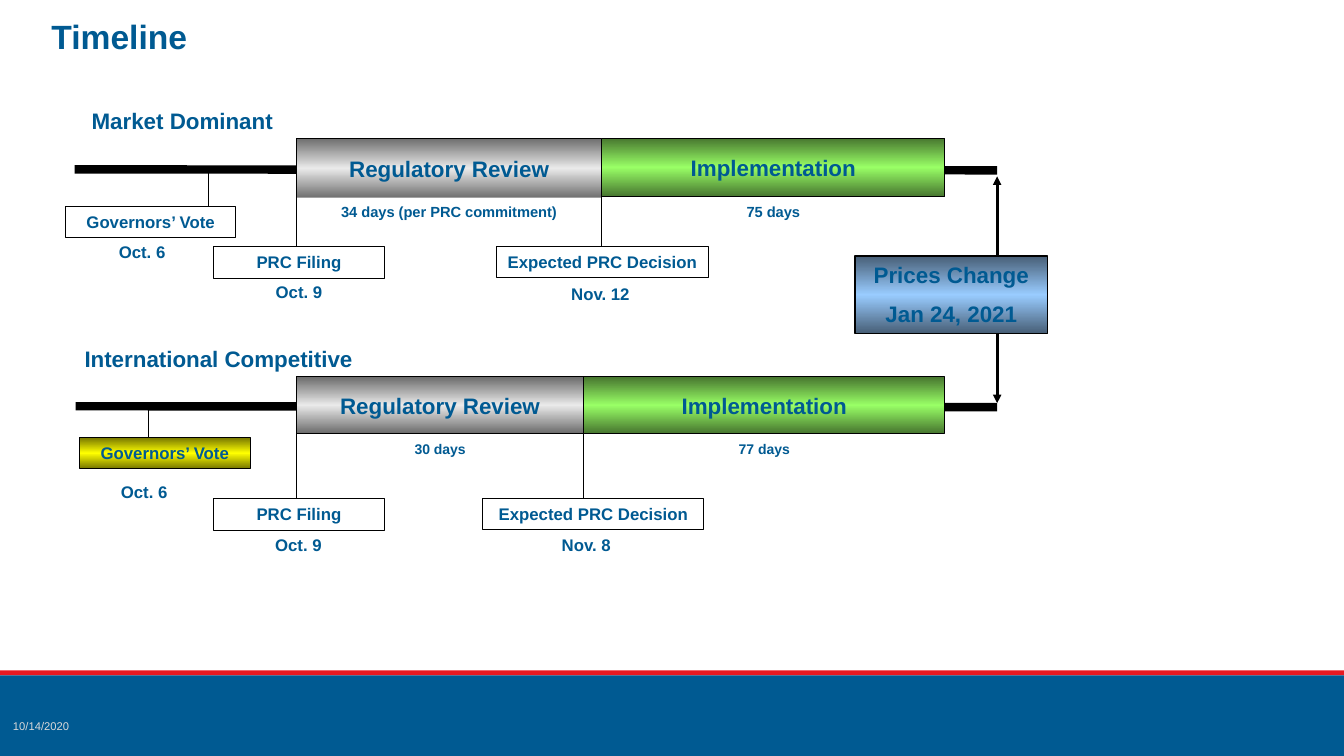
from lxml import etree
from pptx import Presentation
from pptx import util as u
from pptx.dml.color import RGBColor
from pptx.enum import shapes, text
from pptx.oxml import ns

COLORS = {
    "blue": "005A92", "red": "E71921", "white": "FFFFFF", "black": "000000",
    "date": "D9D9D9",
}
# Edge and middle colour of each vertical gradient
GRADIENTS = {
    "review": ("6C6C6C", "EAEAEA"),
    "implementation": ("47762F", "99FF66"),
    "prices": ("475E76", "99CCFF"),
    "vote": ("767600", "FFFF00"),
}
COLS, ROWS = 133.3, 75  # grid cells of a tenth of an inch
CELL = u.Inches(0.1)
REVIEW_LEFT, TRACK_RIGHT, IMPLEMENT_RIGHT = 29.4, 98.9, 93.7

# Positions in grid columns and rows; each box is (left, top, width, height)
TRACKS = [
    dict(heading="Market Dominant", heading_box=(8.1, 10.1, 20.1, 3.7),
         axis=(7.4, 16.8), bar_top=13.7, review_height=6, implement_height=5.8,
         split=59.7, days=("34 days (per PRC commitment)", "75 days"),
         days_top=19.6, days_height=2.8, days_size=10.5,
         milestones=[
             ("Governors’ Vote", (6.5, 20.5, 16.9, 3.1), "white",
              "Oct. 6", (10.8, 23.5, 8.3, 3), "LEFT", (20.7, 16.7)),
             ("PRC Filing", (21.2, 24.5, 16.9, 3.1), "white",
              "Oct. 9", (21.2, 27.5, 16.9, 3), "CENTER", (29.4, 19.5)),
             ("Expected PRC Decision", (49.2, 24.5, 21.1, 3), "white",
              "Nov. 12", (49.3, 27.7, 20.5, 3), "CENTER", (59.7, 18.6)),
         ]),
    dict(heading="International Competitive", heading_box=(7.4, 33.7, 29, 3.7),
         axis=(7.5, 40.3), bar_top=37.4, review_height=5.6, implement_height=5.6,
         split=57.9, days=("30 days", "77 days"),
         days_top=43.2, days_height=2.7, days_size=10,
         milestones=[
             ("Governors’ Vote", (7.9, 43.4, 16.9, 3.1), "vote",
              "Oct. 6", (11, 47.3, 9.7, 3), "LEFT", (14.7, 40.7)),
             ("PRC Filing", (21.2, 49.5, 16.9, 3.1), "white",
              "Oct. 9", (24.8, 52.6, 9.6, 3), "CENTER", (29.4, 43)),
             ("Expected PRC Decision", (47.9, 49.5, 21.9, 3), "white",
              "Nov. 8", (53.1, 52.6, 10.1, 3), "CENTER", (57.9, 43)),
         ]),
]


def rgb(name):
    return RGBColor.from_string(COLORS[name])


def grid(*cells):
    return [int(c * CELL) for c in cells]


def write(sp, *lines, size=12, color="blue", bold=True, align="CENTER",
          anchor="TOP", gap=0, spacing=None):
    tf = sp.text_frame
    tf.word_wrap = True
    tf.vertical_anchor = text.MSO_ANCHOR[anchor]
    for i, line in enumerate(lines):
        p = tf.paragraphs[0] if i == 0 else tf.add_paragraph()
        p.alignment = text.PP_ALIGN[align]
        p.line_spacing = spacing
        if i:
            p.space_before = u.Pt(gap)
        r = p.add_run()
        r.text = line
        r.font.name, r.font.size, r.font.bold = "Arial", u.Pt(size), bold
        r.font.color.rgb = rgb(color)


def add_label(s, box, line, **style):
    write(s.shapes.add_textbox(*grid(*box)), line, **style)


def add_box(s, box, fill, *lines, outline=True, **style):
    sp = s.shapes.add_shape(shapes.MSO_SHAPE.RECTANGLE, *grid(*box))
    sp.shadow.inherit = False
    if fill in GRADIENTS:
        sp.fill.gradient()
        sp.fill.gradient_angle = 270
        edge, middle = GRADIENTS[fill]
        stops = sp.fill._fill._gradFill.find(ns.qn("a:gsLst"))
        for stop in list(stops):
            stops.remove(stop)
        for pos, value in ((0, edge), (50000, middle), (100000, edge)):
            stop = etree.SubElement(stops, ns.qn("a:gs"), pos=str(pos))
            etree.SubElement(stop, ns.qn("a:srgbClr"), val=value)
    else:
        sp.fill.solid()
        sp.fill.fore_color.rgb = rgb(fill)
    if outline:
        sp.line.color.rgb = rgb("black")
        sp.line.width = u.Pt(0.75)
    else:
        sp.line.fill.background()
    write(sp, *lines, **style)


def add_line(s, start, end, width=0.75, arrows=False):
    ln = s.shapes.add_connector(shapes.MSO_CONNECTOR.STRAIGHT,
                                *grid(*start, *end))
    ln.line.color.rgb = rgb("black")
    ln.line.width = u.Pt(width)
    if arrows:
        for tag in ("a:headEnd", "a:tailEnd"):
            etree.SubElement(ln.line._get_or_add_ln(), ns.qn(tag),
                             type="triangle")
    etree.SubElement(ln._element.spPr, ns.qn("a:effectLst"))


def add_track(s, t):
    left, y = t["axis"]
    add_line(s, (left, y), (TRACK_RIGHT, y + 0.1), width=6)
    add_label(s, t["heading_box"], t["heading"], size=16, align="LEFT")

    # Phase bars with their durations underneath
    split = t["split"]
    phases = [
        (split, IMPLEMENT_RIGHT, "implementation", "Implementation",
         t["implement_height"], t["days"][1]),
        (REVIEW_LEFT, split, "review", "Regulatory Review",
         t["review_height"], t["days"][0]),
    ]
    for x, right, fill, name, height, days in phases:
        add_box(s, (x, t["bar_top"], right - x, height), fill, name,
                size=16, anchor="MIDDLE")
        add_box(s, (x, t["days_top"], right - x, t["days_height"]), "white",
                days, outline=False, size=t["days_size"], anchor="MIDDLE")

    # Milestones hanging from the bars
    for name, box, fill, date, date_box, align, (x, top) in t["milestones"]:
        add_line(s, (x, top), (x, box[1]))
        add_box(s, box, fill, name)
        add_label(s, date_box, date, align=align)


def main():
    prs = Presentation()
    prs.slide_width, prs.slide_height = grid(COLS, ROWS)
    s = prs.slides.add_slide(prs.slide_layouts[5])

    # Title
    title = s.shapes.title
    title.left, title.top, title.width, title.height = grid(4.1, 0, 115, 7.7)
    write(title, "Timeline", size=24, align="LEFT", anchor="MIDDLE",
          spacing=0.9)

    # Footer band and date
    add_box(s, (0, 66.5, COLS, 0.5), "red", outline=False)
    add_box(s, (0, 67, COLS, 8), "blue", outline=False)
    add_label(s, (0.3, 70.7, 12.5, 2.6), "10/14/2020", size=8, color="date",
              bold=False, align="LEFT", anchor="MIDDLE")

    # Shared price change, then the two tracks
    add_line(s, (TRACK_RIGHT, 17.5), (TRACK_RIGHT, 40), width=2, arrows=True)
    add_box(s, (84.8, 25.4, 19.1, 7.7), "prices", "Prices Change",
            "Jan 24, 2021", size=16, gap=8.5)
    for track in TRACKS:
        add_track(s, track)

    prs.save("out.pptx")


if __name__ == "__main__":
    main()
